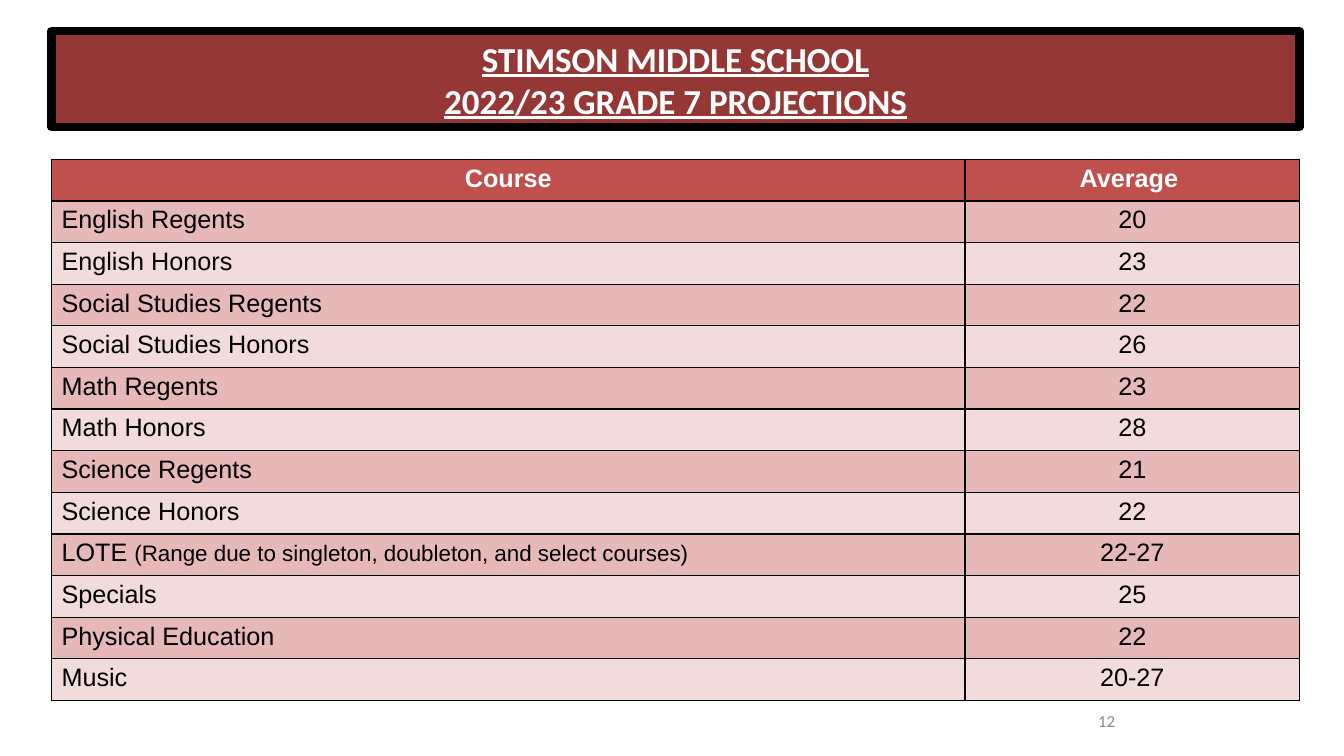
from dataclasses import dataclass
from lxml import etree
from pptx import Presentation
from pptx.dml.color import RGBColor
from pptx.enum import shapes, text
from pptx.oxml import ns
from pptx.util import Inches, Pt


@dataclass(frozen=True)
class Theme:
    """Colours, fonts and type sizes of the slide."""
    banner: str = "953734"
    head: str = "C0504D"
    bands: tuple = ("E6B9B8", "F2DCDB")
    ink: str = "000000"
    paper: str = "FFFFFF"
    faint: str = "888888"
    sans: str = "Calibri"
    grid: str = "Arial"
    title: int = 25
    body: int = 18
    note: int = 16
    foot: int = 12


THEME = Theme()
WIDE, HIGH = Inches(13.33), Inches(7.5)
LEFT, SPAN = 3.83, 92.87
COLS = (67.97, 24.9)
MID, RIGHT = text.PP_ALIGN.CENTER, text.PP_ALIGN.RIGHT
TITLE = ("STIMSON MIDDLE SCHOOL", "2022/23 GRADE 7 PROJECTIONS")
HEADS = ("Course", "Average ")
NOTES = {"LOTE ": "(Range due to singleton, doubleton, and select courses)"}
ROWS = (
    ("English Regents", "20"),
    ("English Honors", "23"),
    ("Social Studies Regents", "22"),
    ("Social Studies Honors", "26"),
    ("Math Regents", "23"),
    ("Math Honors", "28"),
    ("Science Regents", "21"),
    ("Science Honors", "22"),
    ("LOTE ", "22-27"),
    ("Specials", "25"),
    ("Physical Education", "22"),
    ("Music", "20-27"),
)


def place(x, y, w, h):
    """Turn percentages of the slide into lengths."""
    return [int(whole * part / 100)
            for whole, part in zip((WIDE, HIGH, WIDE, HIGH), (x, y, w, h))]


def paint(fill, tint):
    """Give a fill one solid colour."""
    fill.solid()
    fill.fore_color.rgb = RGBColor.from_string(tint)


def write(para, words, tint, **form):
    """Add a run of words with the given font values."""
    run = para.add_run()
    run.text = words
    run.font.color.rgb = RGBColor.from_string(tint)
    for name, value in form.items():
        setattr(run.font, name, value)


def banner(slide):
    """Draw the framed title bar."""
    bar = slide.shapes.add_shape(
        shapes.MSO_SHAPE.RECTANGLE, *place(LEFT, 4.13, SPAN, 12.67))
    bar.shadow.inherit = False
    paint(bar.fill, THEME.banner)
    paint(bar.line.fill, THEME.ink)
    bar.line.width = Pt(6)
    etree.SubElement(bar.line.fill._xPr, ns.qn("a:round"))
    bar.text_frame.vertical_anchor = text.MSO_ANCHOR.MIDDLE
    para = bar.text_frame.paragraphs[0]
    para.alignment = MID
    form = {"name": THEME.sans, "size": Pt(THEME.title),
            "bold": True, "underline": True}
    for i, line in enumerate(TITLE):
        if i:
            para.add_line_break()
        write(para, line, THEME.paper, **form)


def border(cell):
    """Rule all four sides of a cell."""
    props = cell._tc.get_or_add_tcPr()
    for i, side in enumerate(("lnL", "lnR", "lnT", "lnB")):
        line = etree.Element(ns.qn("a:" + side), w=str(Pt(1)))
        solid = etree.SubElement(line, ns.qn("a:solidFill"))
        etree.SubElement(solid, ns.qn("a:srgbClr"), val=THEME.ink)
        props.insert(i, line)


def table(slide):
    """Build the table of courses and averages."""
    lines = (HEADS, *ROWS)
    grid = slide.shapes.add_table(
        len(lines), len(COLS), *place(LEFT, 21.07, SPAN, 71.6)).table
    for col, share in zip(grid.columns, COLS):
        col.width = int(WIDE * share / 100)
    for r, line in enumerate(lines):
        top = r == 0
        for c, words in enumerate(line):
            cell = grid.cell(r, c)
            paint(cell.fill, THEME.head if top else THEME.bands[(r - 1) % 2])
            border(cell)
            para = cell.text_frame.paragraphs[0]
            if top or c:
                para.alignment = MID
            tint = THEME.paper if top else THEME.ink
            form = {"name": THEME.grid, "bold": top}
            write(para, words, tint, size=Pt(THEME.body), **form)
            if words in NOTES:
                write(para, NOTES[words], tint, size=Pt(THEME.note), **form)


def number(slide, words):
    """Set the page number under the table."""
    frame = slide.shapes.add_textbox(
        *place(66.24, 92.67, 17.48, 5.33)).text_frame
    frame.word_wrap = True
    frame.vertical_anchor = text.MSO_ANCHOR.MIDDLE
    para = frame.paragraphs[0]
    para.alignment = RIGHT
    write(para, words, THEME.faint, name=THEME.sans, size=Pt(THEME.foot))


def main():
    """Build and save the slide."""
    deck = Presentation()
    deck.slide_width, deck.slide_height = WIDE, HIGH
    slide = deck.slides.add_slide(deck.slide_layouts[6])
    banner(slide)
    number(slide, "12")
    table(slide)
    deck.save("out.pptx")


if __name__ == "__main__":
    main()
